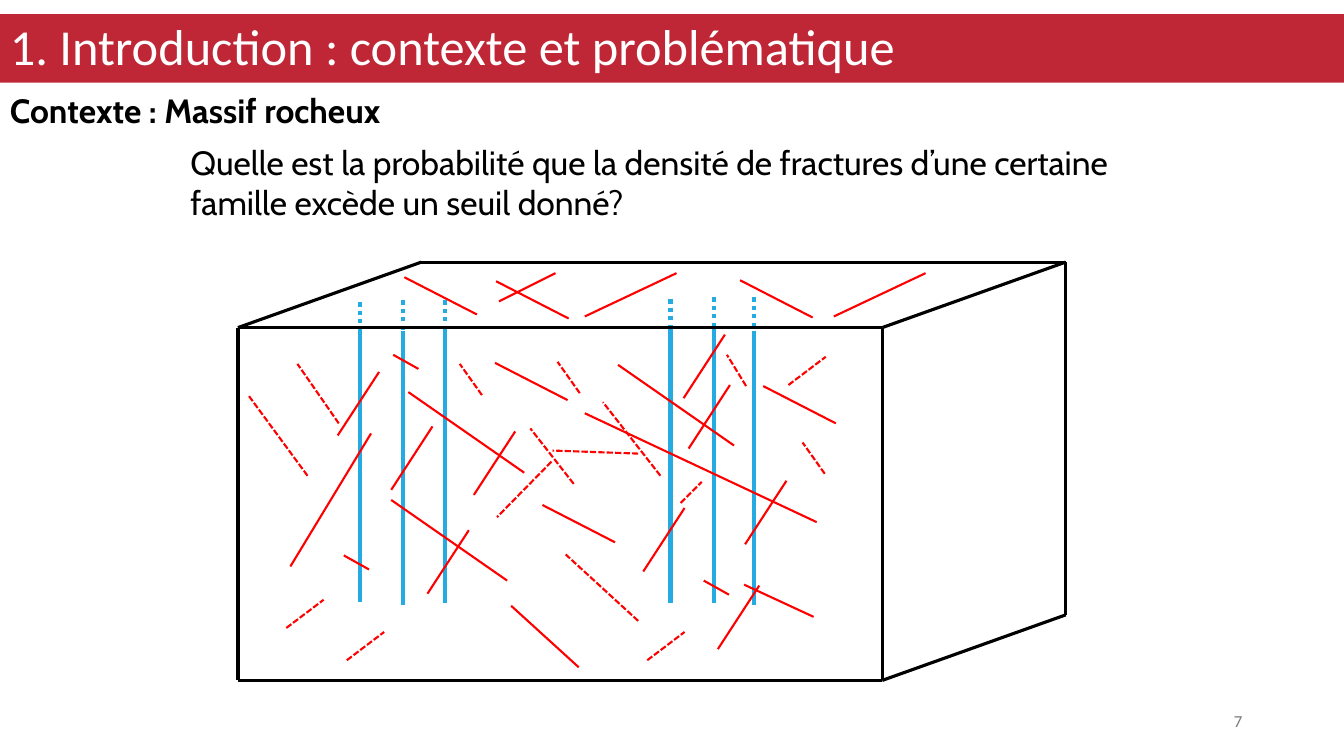
from lxml import etree
from pptx import Presentation
from pptx import util as u
from pptx.dml.color import RGBColor
from pptx.enum import dml, shapes, text
from pptx.oxml.ns import qn

BLACK, RED, BLUE, WHITE = "000000", "FF0000", "25AAE1", "FFFFFF"
DOT = dml.MSO_LINE.ROUND_DOT
DASH = dml.MSO_LINE.SQUARE_DOT

WELLS = [(1.21, 0.65, 0.4), (1.64, 0.68, 0.38), (2.05, 0.66, 0.38),
         (4.29, 0.66, 0.37), (4.72, 0.66, 0.35), (5.12, 0.68, 0.35)]

SOLID = {
    (2.3, 1.08): [(3.44, 1.5)],
    (1.15, 0.8): [(3.77, 1.02), (1.52, 2.36), (1.69, 1.29)],
    (-0.8, 1.32): [(1.32, 1.7)],
    (-0.41, 0.63): [(1.4, 1.09), (1.93, 1.63), (4.43, 2.44),
                    (5.44, 2.17), (4.88, 1.22), (4.83, 0.72),
                    (5.17, 3.21), (2.29, 2.66), (2.75, 1.68)],
    (-0.91, 0.43): [(6.82, 0.11), (4.35, 0.11)],
    (-0.56, 0.28): [(3.15, 0.11)],
    (0.72, 0.37): [(1.65, 0.15), (2.56, 0.19), (2.55, 1),
                   (4.98, 0.18), (5.21, 1.23), (3.02, 2.41)],
    (0.67, 0.61): [(2.71, 3.41)],
    (0.25, 0.14): [(1.54, 0.92), (1.05, 2.91), (4.62, 3.16)],
    (0.69, 0.32): [(5.02, 3.2)],
}

DASHED = {
    (-0.54, 0.55): [(3.11, 1.98)],
    (-0.43, -0.55): [(3.33, 2.2)],
    (-0.85, -0.03): [(3.97, 1.9)],
    (-0.57, -0.73): [(4.19, 2.12)],
    (-0.72, -0.66): [(3.97, 3.56)],
    (-0.58, -0.79): [(0.69, 2.12)],
    (-0.41, -0.59): [(1, 1.6)],
    (-0.22, -0.31): [(2.42, 1.32), (3.39, 1.3), (5.82, 2.1)],
    (0.37, -0.28): [(5.46, 1.22), (4.06, 3.95), (1.08, 3.95), (0.48, 3.63)],
    (0.21, -0.21): [(4.39, 2.39)],
    (-0.19, -0.31): [(5.04, 1.23)],
}


def hue(code):
    """Turn a hex string into a colour."""
    return RGBColor.from_string(code)


def write(slide, box, words, font="Cabin", size=24, color=BLACK, bold=False,
          align=text.PP_ALIGN.LEFT, anchor=text.MSO_ANCHOR.TOP, space=None):
    """Put formatted text in a box."""
    frame = slide.shapes.add_textbox(*map(u.Inches, box)).text_frame
    frame.word_wrap = True
    frame.vertical_anchor = anchor
    para = frame.paragraphs[0]
    para.alignment = align
    para.line_spacing = space
    run = para.add_run()
    run.text = words
    run.font.name, run.font.size, run.font.bold = font, u.Pt(size), bold
    run.font.color.rgb = hue(color)


def draw(slide, start, end, color, width, dash=None):
    """Draw one straight line."""
    line = slide.shapes.add_connector(
        shapes.MSO_CONNECTOR.STRAIGHT, *map(u.Inches, (*start, *end)))
    line.line.color.rgb = hue(color)
    line.line.width = u.Pt(width)
    if dash:
        line.line.dash_style = dash
    etree.SubElement(line._element.spPr, qn("a:effectLst"))


def header(slide, box):
    """Draw the title band and its title."""
    left, top, wide, high = box
    band = slide.shapes.add_shape(
        shapes.MSO_SHAPE.RECTANGLE, *map(u.Inches, box))
    band.shadow.inherit = False
    band.fill.solid()
    band.fill.fore_color.rgb = hue("C02736")
    band.line.fill.background()
    write(slide, (left, top + 0.03, wide - 1.83, high - 0.04),
          "1. Introduction : contexte et problématique", font="Calibri",
          size=36, color=WHITE, anchor=text.MSO_ANCHOR.MIDDLE, space=0.9)


def question(slide, box):
    """Write the context heading and the question under it."""
    left, top, wide, high = box
    write(slide, (left, top, 5.51, 0.5), "Contexte\u00a0: Massif rocheux",
          bold=True)
    write(slide, (left + 1.79, top + 0.52, wide - 1.79, high - 0.52),
          "Quelle est la probabilité que la densité de fractures d’une "
          "certaine famille excède un seuil donné?")


def rock(slide, box):
    """Draw the rock block with its wells and fractures."""
    left, top, wide, high = box
    deep, rise = 1.82, 0.65
    face = wide - deep

    def mark(x, y, dx, dy, *style):
        """Draw a line from a point of the block along a vector."""
        x, y = left + x, top + y
        draw(slide, (x, y), (x + dx, y + dy), *style)

    for x, y, tip in WELLS:
        mark(x, y, 0, 2.72, BLUE, 3)
        mark(x, tip, 0, 0.33, BLUE, 3, DOT)
    for x, y in ((0, rise), (face, rise), (wide, 0)):
        mark(x, y, 0, high - rise, BLACK, 2.25)
    for x, y in ((0, rise), (0, high), (deep, 0)):
        mark(x, y, face, 0, BLACK, 2.25)
    for x, y in ((0, rise), (face, rise), (face, high)):
        mark(x, y, deep, -rise, BLACK, 2.25)
    for group, dash in ((SOLID, None), (DASHED, DASH)):
        for step, spots in group.items():
            for spot in spots:
                mark(*spot, *step, RED, 1.5, dash)


def main():
    """Build and save the slide."""
    deck = Presentation()
    deck.slide_width, deck.slide_height = u.Inches(13.33), u.Inches(7.5)
    slide = deck.slides.add_slide(deck.slide_layouts[6])
    header(slide, (0, 0.14, 13.33, 0.68))
    question(slide, (0, 0.84, 11.28, 1.43))
    rock(slide, (2.36, 2.6, 8.21, 4.15))
    write(slide, (9.42, 6.95, 3, 0.4), "7", font="Calibri", size=12,
          color="797979", align=text.PP_ALIGN.RIGHT,
          anchor=text.MSO_ANCHOR.MIDDLE)
    deck.save("out.pptx")


if __name__ == "__main__":
    main()
